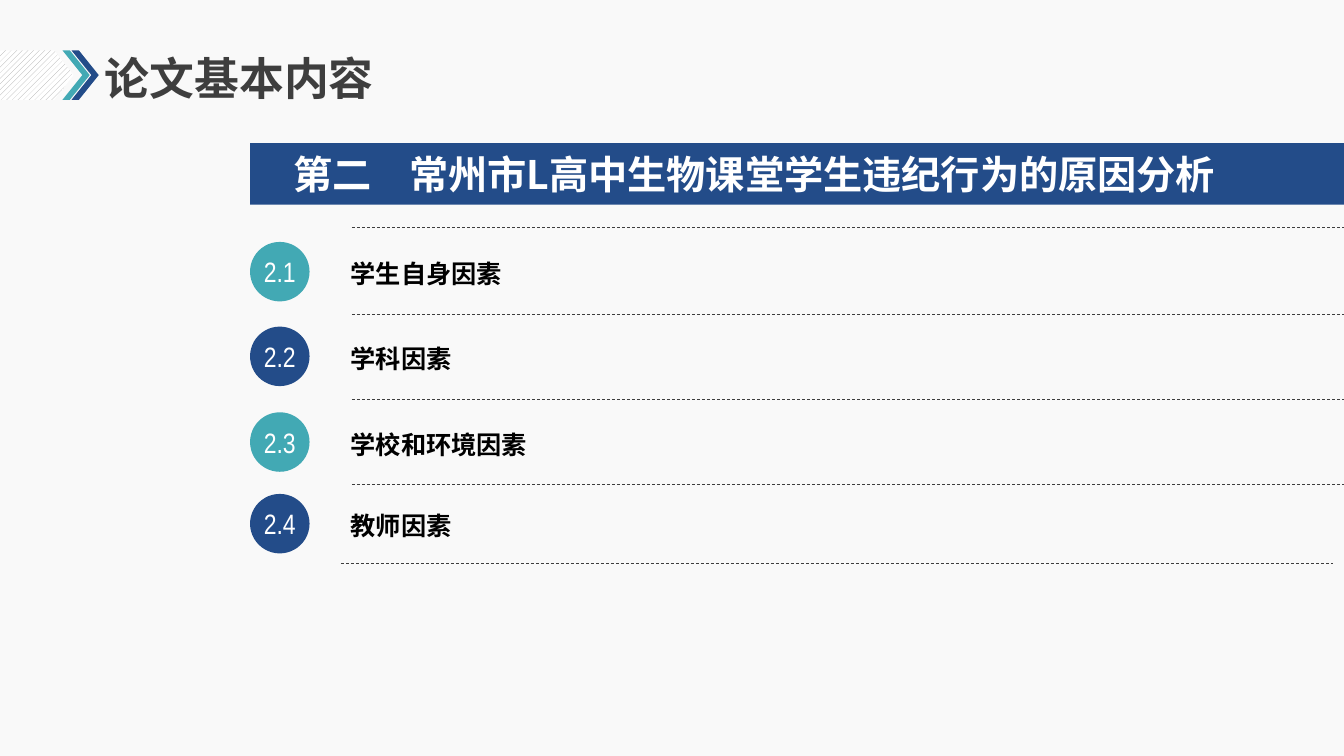
import pptx
import pptx.util
import pptx.dml.color
import pptx.enum.dml
import pptx.enum.shapes
import pptx.enum.text
import pptx.oxml.ns
import lxml.etree

Inches, Pt = pptx.util.Inches, pptx.util.Pt
RGB = pptx.dml.color.RGBColor
SHAPE = pptx.enum.shapes.MSO_SHAPE
ALIGN = pptx.enum.text.PP_ALIGN
MIDDLE = pptx.enum.text.MSO_ANCHOR.MIDDLE
TOP = pptx.enum.text.MSO_ANCHOR.TOP
qn = pptx.oxml.ns.qn

TITLE = "论文基本内容"
PART = "第二"
HEAD = "常州市L高中生物课堂学生违纪行为的原因分析"
# number, text, top of circle
ROWS = [
    ("2.1", "学生自身因素", 2.4),
    ("2.2", "学科因素", 3.24),
    ("2.3", "学校和环境因素", 4.09),
    ("2.4", "教师因素", 4.9),
]
# left end and height of each dashed rule
RULES = [(3.49, 2.26), (3.49, 3.12), (3.49, 3.96), (3.49, 4.81), (3.38, 5.59)]
RULE_W = 9.84

PAPER = RGB(0xF9, 0xF9, 0xF9)
TEAL = RGB(0x42, 0xA9, 0xB4)
NAVY = RGB(0x23, 0x4C, 0x89)
DARK = RGB(0x3E, 0x3E, 0x3E)
GREY = RGB(0xA6, 0xA6, 0xA6)
WHITE = RGB(0xFF, 0xFF, 0xFF)
BLACK = RGB(0, 0, 0)
HAN, LATIN, HEADER = "Noto Sans CJK SC", "Arial Narrow", "Cabin"

deck = pptx.Presentation()
deck.slide_width, deck.slide_height = Inches(13.33), Inches(7.5)
slide = deck.slides.add_slide(deck.slide_layouts[5])
slide.background.fill.solid()
slide.background.fill.fore_color.rgb = PAPER


def add_form(kind, box, color):
    form = slide.shapes.add_shape(kind, *map(Inches, box))
    form.shadow.inherit = False
    form.line.fill.background()
    form.fill.solid()
    form.fill.fore_color.rgb = color
    return form


def add_box(box):
    return slide.shapes.add_textbox(*map(Inches, box))


def write(shape, text, size, color, font=HAN, bold=True, align=ALIGN.LEFT,
          anchor=MIDDLE, inset=None, space=None):
    """Fill a shape with one paragraph; inset is the left margin, others zero."""
    frame = shape.text_frame
    frame.text = text
    frame.word_wrap = True
    frame.auto_size = pptx.enum.text.MSO_AUTO_SIZE.NONE
    frame.vertical_anchor = anchor
    if inset is not None:
        frame.margin_left = Inches(inset)
        frame.margin_top = frame.margin_right = frame.margin_bottom = 0
    para = frame.paragraphs[0]
    para.alignment = align
    para.line_spacing = space
    para.font.name, para.font.size = font, Pt(size)
    para.font.bold, para.font.color.rgb = bold, color
    # Chinese glyphs take the East Asian typeface
    latin = para.runs[0].font
    latin.name = font
    east = lxml.etree.Element(qn("a:ea"), typeface=HAN)
    para.runs[0]._r.rPr.find(qn("a:latin")).addnext(east)


def add_rule(left, top):
    rule = slide.shapes.add_connector(
        pptx.enum.shapes.MSO_CONNECTOR.STRAIGHT,
        Inches(left), Inches(top), Inches(left + RULE_W), Inches(top))
    rule.line.color.rgb = DARK
    rule.line.width = Pt(0.5)
    rule.line.dash_style = pptx.enum.dml.MSO_LINE.DASH
    lxml.etree.SubElement(rule._element.spPr, qn("a:effectLst"))


# Title with its arrow band
band = add_form(SHAPE.PENTAGON, (0, 0.5, 0.73, 0.49), WHITE)
band.adjustments[0] = 0.39
band.fill.patterned()
band.fill.pattern = pptx.enum.dml.MSO_PATTERN.WIDE_UPWARD_DIAGONAL
band.fill.fore_color.rgb, band.fill.back_color.rgb = GREY, WHITE
for left, color in ((0.62, TEAL), (0.71, NAVY)):
    add_form(SHAPE.CHEVRON, (left, 0.5, 0.27, 0.49), color).adjustments[0] = 0.73

title = slide.shapes.title
title.left, title.top = Inches(0.94), Inches(0.55)
title.width, title.height = Inches(4.94), Inches(0.5)
write(title, TITLE, 32, DARK, font=HEADER, space=0.9)

# Heading bar
bar = add_form(SHAPE.RECTANGLE, (2.48, 1.42, 10.85, 0.61), NAVY)
write(bar, PART, 28, WHITE, inset=0.43)
write(add_box((3.9, 1.42, 9.03, 0.61)), HEAD, 28, WHITE,
      align=ALIGN.JUSTIFY, inset=0.16)

# Numbered rows
for index, (number, text, top) in enumerate(ROWS):
    dot = add_form(SHAPE.OVAL, (2.48, top, 0.59, 0.59), (TEAL, NAVY)[index % 2])
    write(dot, number, 20, WHITE, font=LATIN, bold=False,
          align=ALIGN.CENTER, inset=0)
    write(add_box((3.38, top + 0.11, 8.16, 0.41)), text, 18, BLACK,
          anchor=TOP, space=Pt(22))

for left, top in RULES:
    add_rule(left, top)

deck.save("out.pptx")
